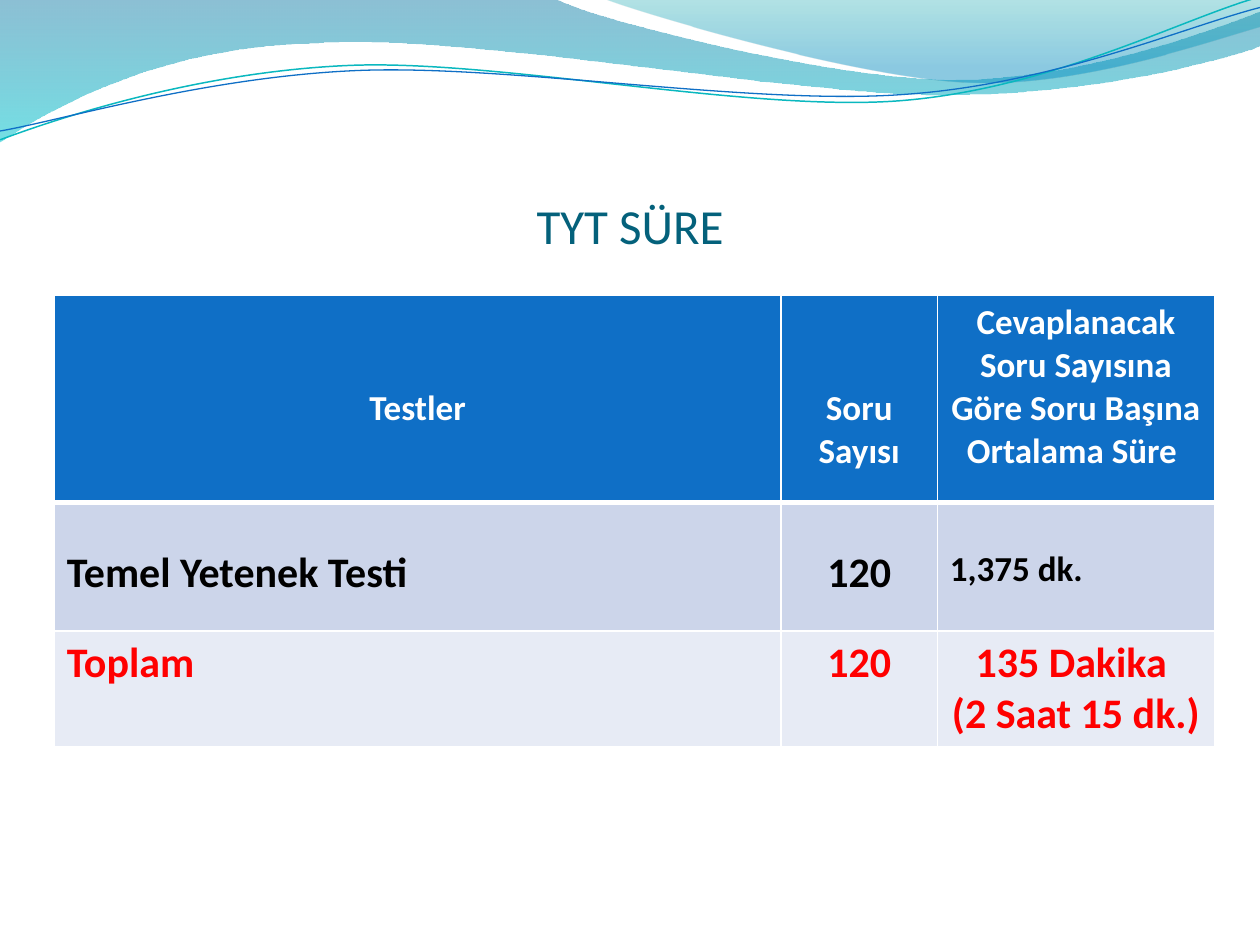
from dataclasses import dataclass
from math import cos, radians, sin
from typing import Optional

from lxml.etree import SubElement
from pptx import Presentation
from pptx.dml.color import RGBColor
from pptx.enum.text import MSO_ANCHOR as Anchor, PP_ALIGN as Align
from pptx.oxml.ns import qn
from pptx.util import Inches, Pt

COLORS = {
    "title": "04617B", "header": "0F6FC6", "test_row": "CCD5EA", "total_row": "E7EBF5",
    "white": "FFFFFF", "black": "000000", "red": "FF0000",
    "wave_top": "0074A1", "wave_bottom": "00C6CF",
    "crest_top": "00A1A9", "crest_bottom": "008BBF",
    "teal_line": "0AB8BF", "blue_line": "0F6FC6",
}
FONT = "Calibri"
UNITS_PER_INCH = 1000
LINE_TILT = 357.3

Point = tuple[float, float]


@dataclass
class Stop:
    position: float
    color: str
    opacity: int


@dataclass
class Wave:
    """Points in inches; a segment of one point is a line, of three a Bezier curve."""
    start: Point
    segments: list[list[Point]]
    stops: Optional[list[Stop]] = None
    line_color: str = ""
    line_width: float = 0
    center: Point = (0, 0)
    rotation: float = 0


@dataclass
class Cell:
    text: str
    size: int
    align: Align = Align.CENTER
    top: float = 0.05


@dataclass
class Row:
    height: float
    fill: str
    color: str
    cells: list[Cell]
    bottom_border: float = 1


WAVES = [
    Wave((0, 0), [[(4.4, -0.01)],
                  [(4.76, 0.17), (6.64, 0.63), (7.58, 0.63)],
                  [(8.53, 0.63), (9.58, 0.26), (10, 0.09)],
                  [(10.01, 0.36)],
                  [(9.83, 0.44), (8.7, 0.76), (7.46, 0.75)],
                  [(6.22, 0.75), (3.82, 0.28), (2.57, 0.34)],
                  [(1.29, 0.36), (0.46, 0.83), (-0.01, 1.13)],
                  [(0, 0)]],
         stops=[Stop(0, "wave_top", 45), Stop(1, "wave_bottom", 55)]),
    Wave((4.79, -0.01), [[(5.09, 0.11), (6.82, 0.62), (7.69, 0.65)],
                         [(8.56, 0.69), (9.61, 0.32), (10, 0.21)],
                         [(10, 0)],
                         [(4.79, -0.01)]],
         stops=[Stop(0, "crest_top", 30), Stop(0.8, "crest_bottom", 45)]),
    Wave((0, 1.11), [[(0.48, 0.93), (1.58, 0.57), (2.77, 0.52)],
                     [(3.95, 0.47), (5.93, 0.89), (7.13, 0.8)],
                     [(8.33, 0.71), (9.38, 0.15), (9.98, -0.02)]],
         line_color="teal_line", line_width=0.85, center=(4.99, 0.58), rotation=LINE_TILT),
    Wave((0, 1.04), [[(0.47, 0.96), (1.64, 0.61), (2.83, 0.56)],
                     [(4.03, 0.51), (5.97, 0.84), (7.17, 0.75)],
                     [(8.36, 0.67), (9.41, 0.21), (10, 0.06)]],
         line_color="blue_line", line_width=0.75, center=(5, 0.59), rotation=LINE_TILT),
]

COLUMN_WIDTHS = [5.77, 1.24, 2.2]
ROWS = [
    Row(1.65, "header", "white", [
        Cell("Testler", 20, top=0.73),
        Cell("Soru Sayısı", 20, top=0.73),
        Cell("Cevaplanacak Soru Sayısına Göre Soru Başına Ortalama Süre ", 20)],
        bottom_border=3),
    Row(1.02, "test_row", "black", [
        Cell("Temel Yetenek Testi", 24, Align.LEFT, 0.36),
        Cell("120", 24, top=0.36),
        Cell("1,375 dk. ", 20, Align.LEFT, 0.36)]),
    Row(0.92, "total_row", "red", [
        Cell("Toplam", 24, Align.LEFT),
        Cell("120", 24),
        Cell("135 Dakika \n(2 Saat 15 dk.)", 24)]),
]


def rgb(name: str) -> RGBColor:
    return RGBColor.from_string(COLORS[name])


def write_text(frame, text: str, *, size: int, color: str, bold: bool = False,
               align: Align = Align.CENTER) -> None:
    frame.text = text
    for paragraph in frame.paragraphs:
        paragraph.alignment = align
        for run in paragraph.runs:
            run.font.name = FONT
            run.font.size = Pt(size)
            run.font.bold = bold
            run.font.color.rgb = rgb(color)


def to_units(point: Point, wave: Wave) -> tuple[int, int]:
    """Undo the wave's rotation about its center and scale to freeform units."""
    angle = radians(-wave.rotation)
    dx, dy = point[0] - wave.center[0], point[1] - wave.center[1]
    x = wave.center[0] + dx * cos(angle) - dy * sin(angle)
    y = wave.center[1] + dx * sin(angle) + dy * cos(angle)
    return round(x * UNITS_PER_INCH), round(y * UNITS_PER_INCH)


def bend_segments(shape, segments: list[list[tuple[int, int]]], origin: tuple[int, int]) -> None:
    """Turn the straight segments that have control points into Bezier curves."""
    lines = list(shape._element.iter(qn("a:lnTo")))
    for line, points in zip(lines, segments):
        if len(points) == 1:
            continue
        line.tag = qn("a:cubicBezTo")
        line.clear()
        for x, y in points:
            SubElement(line, qn("a:pt"), x=str(x - origin[0]), y=str(y - origin[1]))


def apply_gradient(shape, stops: list[Stop]) -> None:
    shape.fill.gradient()
    shape.fill.gradient_angle = 270
    elements = shape._element.iter(qn("a:gs"))
    for target, element, stop in zip(shape.fill.gradient_stops, elements, stops):
        target.position = stop.position
        target.color.rgb = rgb(stop.color)
        SubElement(element[0], qn("a:alpha"), val=str(stop.opacity * 1000))


def draw_wave(shapes, wave: Wave) -> None:
    start = to_units(wave.start, wave)
    segments = [[to_units(point, wave) for point in segment] for segment in wave.segments]
    ends = [segment[-1] for segment in segments]
    builder = shapes.build_freeform(*start, scale=Inches(1) / UNITS_PER_INCH)
    builder.add_line_segments(ends, close=wave.stops is not None)
    shape = builder.convert_to_shape()
    origin = tuple(min(values) for values in zip(start, *ends))
    bend_segments(shape, segments, origin)
    shape.rotation = wave.rotation
    shape.shadow.inherit = False
    if wave.stops:
        apply_gradient(shape, wave.stops)
        shape.line.fill.background()
    else:
        shape.fill.background()
        shape.line.color.rgb = rgb(wave.line_color)
        shape.line.width = Pt(wave.line_width)


def place_title(slide, text: str) -> None:
    title = slide.shapes.title
    title.left, title.top = Inches(0.5), Inches(0.77)
    title.width, title.height = Inches(9), Inches(1.25)
    frame = title.text_frame
    frame.vertical_anchor = Anchor.BOTTOM
    frame.margin_left = frame.margin_right = frame.margin_bottom = 0
    write_text(frame, text, size=28, color="title")


def set_bottom_border(cell, width: float) -> None:
    properties = cell._tc.get_or_add_tcPr()
    border = SubElement(properties, qn("a:lnB"), w=str(Pt(width)))
    SubElement(SubElement(border, qn("a:solidFill")), qn("a:srgbClr"), val=COLORS["white"])
    properties.insert(0, border)


def draw_table(shapes, rows: list[Row], widths: list[float]) -> None:
    table = shapes.add_table(len(rows), len(widths), Inches(0.43), Inches(2.34),
                             Inches(sum(widths)), Inches(sum(r.height for r in rows))).table
    for column, width in zip(table.columns, widths):
        column.width = Inches(width)
    for table_row, row in zip(table.rows, rows):
        table_row.height = Inches(row.height)
        for target, cell in zip(table_row.cells, row.cells):
            target.fill.solid()
            target.fill.fore_color.rgb = rgb(row.fill)
            target.margin_top = Inches(cell.top)
            set_bottom_border(target, row.bottom_border)
            write_text(target.text_frame, cell.text, size=cell.size, color=row.color,
                       bold=True, align=cell.align)


def main() -> None:
    deck = Presentation()
    deck.slide_width, deck.slide_height = Inches(10), Inches(7.5)
    slide = deck.slides.add_slide(deck.slide_layouts[5])
    for wave in WAVES:
        draw_wave(slide.shapes, wave)
    place_title(slide, "TYT SÜRE")
    draw_table(slide.shapes, ROWS, COLUMN_WIDTHS)
    deck.save("out.pptx")


if __name__ == "__main__":
    main()
